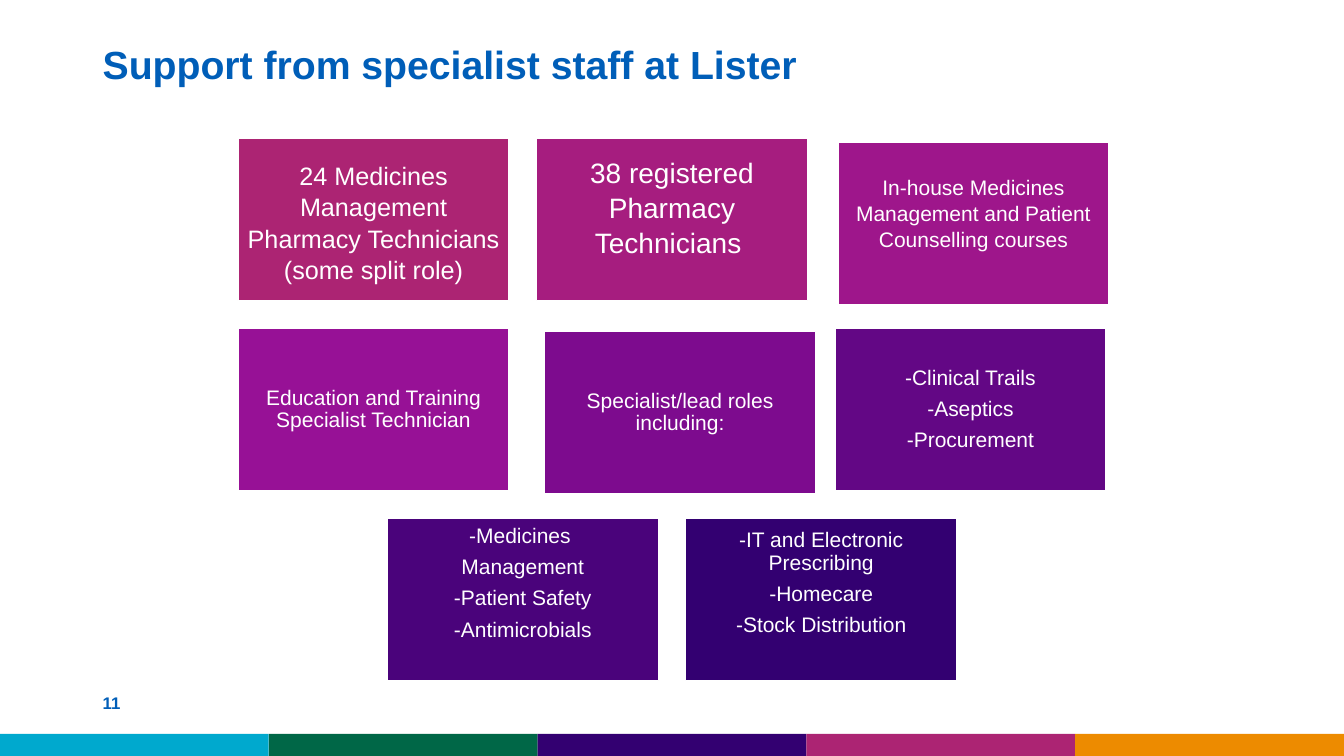
from dataclasses import dataclass

from pptx import Presentation
from pptx.dml.color import RGBColor
from pptx.enum.shapes import MSO_SHAPE
from pptx.enum.text import MSO_ANCHOR, PP_ALIGN
from pptx.slide import Slide
from pptx.util import Inches, Pt

FONT = "Arial"
WHITE = RGBColor(0xFF, 0xFF, 0xFF)
BLUE = RGBColor(0x00, 0x5E, 0xB8)
CYAN = RGBColor(0x00, 0xA9, 0xCE)
GREEN = RGBColor(0x00, 0x67, 0x47)
INDIGO = RGBColor(0x33, 0x00, 0x71)
RASPBERRY = RGBColor(0xAC, 0x24, 0x73)
ORANGE = RGBColor(0xED, 0x8B, 0x00)
MAGENTA = RGBColor(0xA6, 0x1D, 0x7F)
ORCHID = RGBColor(0x9E, 0x16, 0x8B)
VIOLET = RGBColor(0x97, 0x11, 0x96)
PURPLE = RGBColor(0x7D, 0x0B, 0x8E)
PLUM = RGBColor(0x63, 0x07, 0x85)
GRAPE = RGBColor(0x4A, 0x03, 0x7B)

SLIDE_WIDTH, SLIDE_HEIGHT = 13.33, 7.5
FOOTER_COLOURS = (CYAN, GREEN, INDIGO, RASPBERRY, ORANGE)
FOOTER_HEIGHT = 0.22
CARD_WIDTH, CARD_HEIGHT = 2.69, 1.61


@dataclass(frozen=True)
class Card:
    left: float
    top: float
    fill: RGBColor
    text: str
    size: int = 15
    line_spacing: float = 0.9
    inset: float = 0.06
    extra_top: float = 0
    extra_bottom: float = 0


CARDS = (
    Card(2.36, 1.37, RASPBERRY,
         "24 Medicines Management Pharmacy Technicians (some split role)",
         size=18, line_spacing=1.04, inset=0.07, extra_top=0.05),
    Card(5.32, 1.37, MAGENTA, "38 registered Pharmacy Technicians ",
         size=20, line_spacing=1.04, inset=0.08, extra_bottom=0.25),
    Card(8.31, 1.41, ORCHID,
         "In-house Medicines Management and Patient Counselling courses",
         line_spacing=1.04, extra_bottom=0.21),
    Card(2.36, 3.26, VIOLET, "Education and Training Specialist Technician"),
    Card(5.4, 3.29, PURPLE, "Specialist/lead roles including:"),
    Card(8.28, 3.26, PLUM, "-Clinical Trails\n-Aseptics\n-Procurement"),
    Card(3.84, 5.14, GRAPE,
         "-Medicines \nManagement\n-Patient Safety\n-Antimicrobials",
         extra_bottom=0.31),
    Card(6.8, 5.14, INDIGO,
         "-IT and Electronic Prescribing\n-Homecare\n-Stock Distribution",
         extra_bottom=0.32),
)


def add_rectangle(slide: Slide, left: float, top: float, width: float,
                  height: float, fill: RGBColor):
    shape = slide.shapes.add_shape(
        MSO_SHAPE.RECTANGLE, Inches(left), Inches(top),
        Inches(width), Inches(height))
    shape.shadow.inherit = False
    shape.fill.solid()
    shape.fill.fore_color.rgb = fill
    shape.line.fill.background()
    return shape


def format_font(font, size: int, colour: RGBColor, bold: bool = False) -> None:
    font.name = FONT
    font.size = Pt(size)
    font.bold = bold
    font.color.rgb = colour


def add_card(slide: Slide, card: Card) -> None:
    shape = add_rectangle(slide, card.left, card.top,
                          CARD_WIDTH, CARD_HEIGHT, card.fill)
    shape.line.color.rgb = WHITE
    shape.line.width = Pt(1)
    text_frame = shape.text_frame
    text_frame.word_wrap = True
    text_frame.vertical_anchor = MSO_ANCHOR.MIDDLE
    text_frame.margin_left = text_frame.margin_right = Inches(card.inset)
    text_frame.margin_top = Inches(card.inset + card.extra_top)
    text_frame.margin_bottom = Inches(card.inset + card.extra_bottom)
    text_frame.text = card.text
    for paragraph in text_frame.paragraphs:
        paragraph.alignment = PP_ALIGN.CENTER
        paragraph.line_spacing = card.line_spacing
        paragraph.space_after = Pt(6)
        for run in paragraph.runs:
            format_font(run.font, card.size, WHITE)


def add_heading(slide: Slide, text: str, top: float, width: float,
                height: float, size: int, anchor: MSO_ANCHOR,
                line_spacing: float = 1.0) -> None:
    """Add bold blue text on the left margin of the slide."""
    box = slide.shapes.add_textbox(
        Inches(0.92), Inches(top), Inches(width), Inches(height))
    text_frame = box.text_frame
    text_frame.word_wrap = True
    text_frame.vertical_anchor = anchor
    text_frame.text = text
    paragraph = text_frame.paragraphs[0]
    paragraph.line_spacing = line_spacing
    format_font(paragraph.runs[0].font, size, BLUE, bold=True)


def main() -> None:
    presentation = Presentation()
    presentation.slide_width = Inches(SLIDE_WIDTH)
    presentation.slide_height = Inches(SLIDE_HEIGHT)
    slide = presentation.slides.add_slide(presentation.slide_layouts[6])

    band_width = SLIDE_WIDTH / len(FOOTER_COLOURS)
    for index, colour in enumerate(FOOTER_COLOURS):
        add_rectangle(slide, index * band_width, SLIDE_HEIGHT - FOOTER_HEIGHT,
                      band_width, FOOTER_HEIGHT, colour)

    add_heading(slide, "Support from specialist staff at Lister",
                0.4, 9.19, 0.65, 28, MSO_ANCHOR.TOP, line_spacing=0.9)
    add_heading(slide, "11", 6.77, 3, 0.4, 12, MSO_ANCHOR.MIDDLE)
    for card in CARDS:
        add_card(slide, card)

    presentation.save("out.pptx")


if __name__ == "__main__":
    main()
